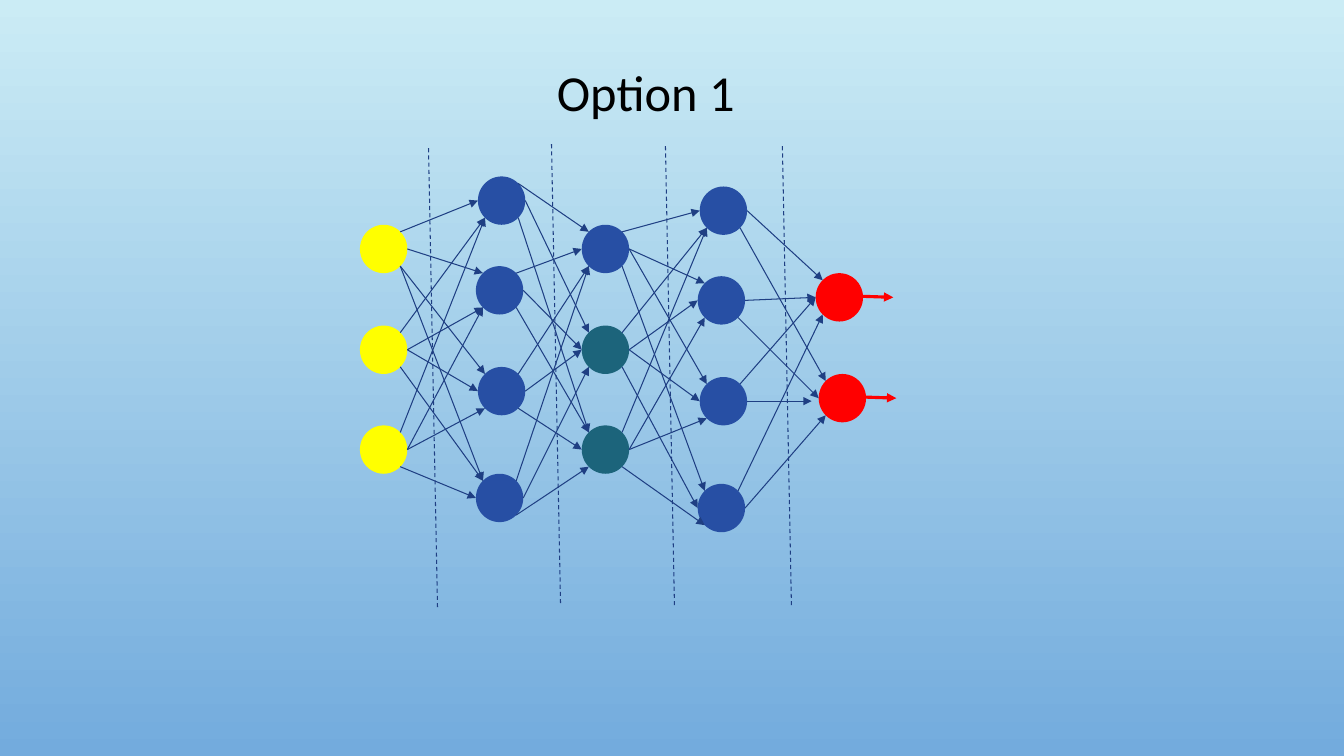
"""Build a slide that shows a layered neural network titled Option 1."""
from pptx import Presentation
from pptx.dml.color import RGBColor
from pptx.enum.dml import MSO_LINE
from pptx.enum.shapes import MSO_CONNECTOR, MSO_SHAPE
from pptx.enum.text import MSO_ANCHOR, PP_ALIGN
from pptx.oxml.ns import qn
from pptx.util import Emu, Pt
from lxml.etree import SubElement

PX = Emu(9144)
WIDE, HIGH = 47, 48
YELLOW, BLUE, TEAL, RED, NAVY = "FFFF00", "274FA4", "1C647B", "FF0000", "1F3F83"


def paint(color, code):
    color.rgb = RGBColor.from_string(code)


def draw_line(start, end, code, weight, arrow=True):
    wire = slide.shapes.add_connector(
        MSO_CONNECTOR.STRAIGHT, *[n * PX for n in (*start, *end)])
    paint(wire.line.color, code)
    wire.line.width = Pt(weight)
    props = wire._element.spPr
    if arrow:
        SubElement(props.find(qn("a:ln")), qn("a:tailEnd"), type="triangle")
    else:
        wire.line.dash_style = MSO_LINE.DASH
    SubElement(props, qn("a:effectLst"))


deck = Presentation()
deck.slide_width, deck.slide_height = 1333 * PX, 750 * PX
slide = deck.slides.add_slide(deck.slide_layouts[5])

back = slide.background.fill
back.gradient()
back.gradient_angle = 270
for stop, place, code in zip(back.gradient_stops, (0, 1), ("CBECF5", "73ABDD")):
    stop.position = place
    paint(stop.color, code)

title = slide.shapes.title
title.left, title.top, title.width, title.height = [n * PX for n in (74, 33, 1133, 123)]
frame = title.text_frame
frame.text = "Option 1"
frame.vertical_anchor = MSO_ANCHOR.MIDDLE
head = frame.paragraphs[0]
head.alignment = PP_ALIGN.CENTER
head.line_spacing = 0.9
font = head.runs[0].font
font.name, font.size = "Calibri", Pt(36)
paint(font.color, "000000")

layers = [
    [(357, 223, YELLOW), (357, 323, YELLOW), (357, 422, YELLOW)],
    [(474, 175, BLUE), (472, 264, BLUE), (474, 364, BLUE), (472, 470, BLUE)],
    [(577, 223, BLUE), (577, 323, TEAL), (577, 422, TEAL)],
    [(694, 185, BLUE), (692, 274, BLUE), (694, 374, BLUE), (692, 480, BLUE)],
    [(809, 271, RED), (812, 371, RED)],
]
for layer in layers:
    for left, top, code in layer:
        node = slide.shapes.add_shape(
            MSO_SHAPE.OVAL, left * PX, top * PX, WIDE * PX, HIGH * PX)
        node.shadow.inherit = False
        node.fill.solid()
        paint(node.fill.fore_color, code)
        node.line.fill.background()

exits = {"u": (40, 7), "m": (WIDE, 24), "d": (40, 41)}
entries = {"u": (7, 7), "m": (0, 24), "d": (7, 41), "x": (-7, 27)}
links = [
    ["um mu du du", "ud md mm du", "ud md md dm"],
    ["uu mu du", "um mm du", "ud mm dm", "ud md dd"],
    ["um mu mu du", "ud mm mm dm", "ud md md dd"],
    ["mu du", "mm dm", "um mx", "ud md"],
]
for sources, targets, rows in zip(layers, layers[1:], links):
    for (left, top, _), row in zip(sources, rows):
        for (x, y, _), (leave, enter) in zip(targets, row.split()):
            (dx, dy), (ex, ey) = exits[leave], entries[enter]
            draw_line((left + dx, top + dy), (x + ex, y + ey), NAVY, 0.75)

for left, top, _ in layers[-1]:
    x, y = left + WIDE, top + 23
    draw_line((x, y), (x + 30, y + 1), RED, 2.25)

for x, y in [(425, 147), (547, 143), (660, 145), (776, 145)]:
    draw_line((x, y), (x + 9, y + 458), NAVY, 0.75, arrow=False)

deck.save("out.pptx")
